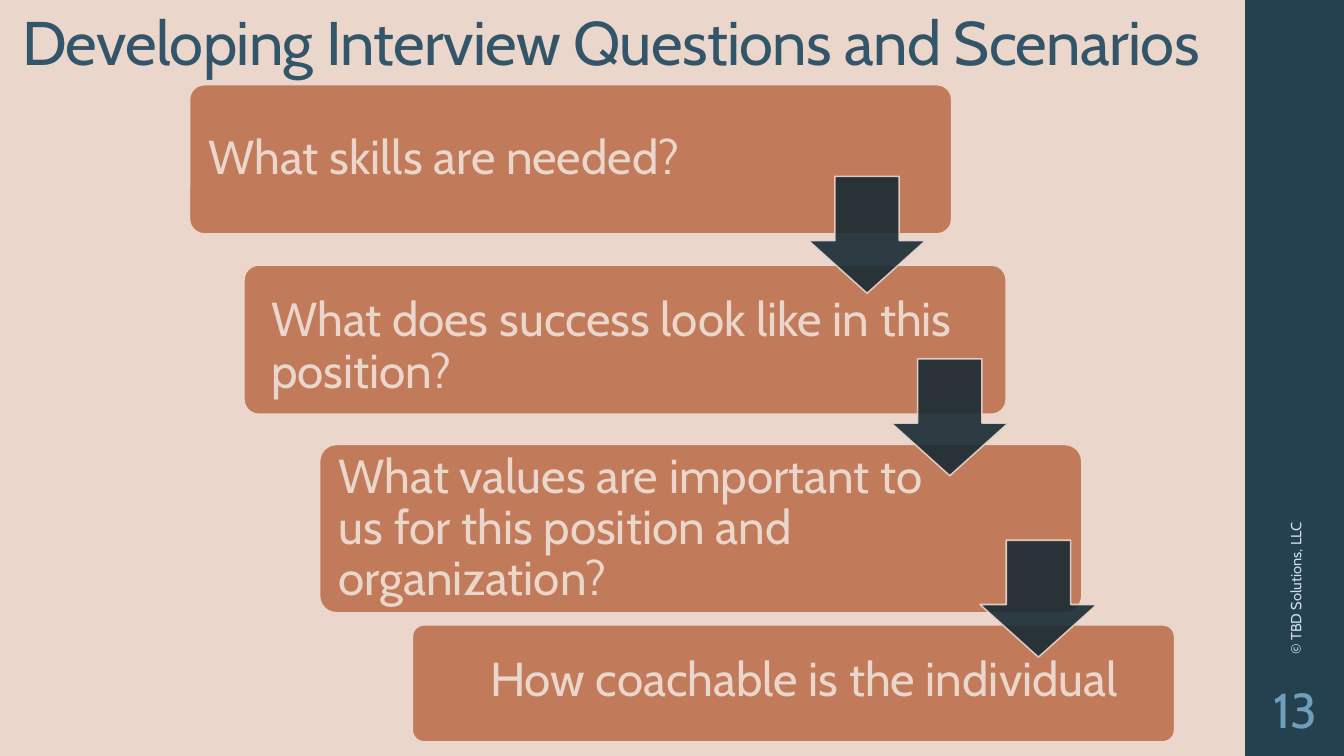
from dataclasses import dataclass

from lxml import etree
from pptx import Presentation
from pptx.dml.color import RGBColor
from pptx.enum.shapes import MSO_SHAPE
from pptx.enum.text import MSO_ANCHOR, PP_ALIGN
from pptx.oxml.ns import qn
from pptx.util import Inches, Pt

RECTANGLE = MSO_SHAPE.RECTANGLE
ROUNDED = MSO_SHAPE.ROUNDED_RECTANGLE
DOWN_ARROW = MSO_SHAPE.DOWN_ARROW
MIDDLE, BOTTOM = MSO_ANCHOR.MIDDLE, MSO_ANCHOR.BOTTOM
LEFT, CENTER = PP_ALIGN.LEFT, PP_ALIGN.CENTER


@dataclass(frozen=True)
class Theme:
    """Colours, font and type sizes of the slide."""
    font: str = "Cabin"
    background: str = "EBD6CC"
    sidebar: str = "25404F"
    title: str = "325569"
    number: str = "6F9FBA"
    copyright: str = "CFDFE8"
    step: str = "C17A5A"
    arrow: str = "192B34"
    arrow_line: str = "E9D7D2"
    title_size: float = 44
    number_size: float = 35
    copyright_size: float = 10.5
    step_size: float = 34
    line_width: float = 1.1


THEME = Theme()
STEP_WIDTH = 7.56
ARROW_SIZE = 1.16
STEPS = [
    ("What skills are needed?", (1.88, 0.84, 1.48), (1.93, 0.88, 5.64, 1.4)),
    ("What does success look like in this position?",
     (2.42, 2.63, 1.48), (2.55, 2.61, 7.3, 1.67)),
    ("What values are important to us for this position and organization?",
     (3.17, 4.41, 1.67), (3.22, 4.46, 6.21, 1.58)),
    ("How coachable is the individual",
     (4.09, 6.2, 1.16), (4.72, 6.2, 7.22, 1.11)),
]
ARROWS = [(8.02, 1.75), (8.84, 3.56), (9.72, 5.36)]


def add_text(slide, text, box, *, size, color, anchor=MIDDLE, align=LEFT,
             insets=(0.1, 0.05), line_spacing=None, tracking=None, rotation=0):
    """Add one formatted paragraph in a wrapping text box."""
    label = slide.shapes.add_textbox(*map(Inches, box))
    label.rotation = rotation
    frame = label.text_frame
    frame.word_wrap = True
    frame.vertical_anchor = anchor
    frame.margin_left = frame.margin_right = Inches(insets[0])
    frame.margin_top = frame.margin_bottom = Inches(insets[1])
    paragraph = frame.paragraphs[0]
    paragraph.alignment = align
    paragraph.line_spacing = line_spacing
    run = paragraph.add_run()
    run.text = text
    run.font.name = THEME.font
    run.font.size = Pt(size)
    run.font.color.rgb = RGBColor.from_string(color)
    if tracking is not None:
        run.font._element.set("spc", str(round(tracking * 100)))


def set_opacity(color_format, percent):
    """Set the opacity of a solid fill."""
    color = color_format._xPr.find(qn("a:solidFill"))[0]
    etree.SubElement(color, qn("a:alpha")).set("val", str(percent * 1000))


def add_block(slide, kind, box, fill, *, line=None, adjustments=(), opacity=None):
    """Add a filled preset shape with an optional outline."""
    block = slide.shapes.add_shape(kind, *map(Inches, box))
    block.shadow.inherit = False
    for index, value in enumerate(adjustments):
        block.adjustments[index] = value
    block.fill.solid()
    block.fill.fore_color.rgb = RGBColor.from_string(fill)
    if line:
        block.line.color.rgb = RGBColor.from_string(line)
        block.line.width = Pt(THEME.line_width)
    else:
        block.line.fill.background()
    if opacity is not None:
        set_opacity(block.fill, opacity)
        set_opacity(block.line.fill, opacity)


def set_opacity(fill, percent):
    """Make a solid fill partly transparent."""
    color = fill._xPr.find(qn("a:solidFill"))[0]
    etree.SubElement(color, qn("a:alpha")).set("val", str(percent * 1000))


def add_step(slide, text, place, text_box):
    """Add one step of the staircase with its question."""
    left, top, height = place
    add_block(slide, ROUNDED, (left, top, STEP_WIDTH, height), THEME.step,
              line=THEME.background, adjustments=(0.1,))
    add_text(slide, text, text_box, size=THEME.step_size, color=THEME.background,
             insets=(0.14, 0.14), line_spacing=0.9)


def add_sidebar(slide):
    """Add the dark band with page number and copyright line."""
    add_block(slide, RECTANGLE, (12.35, 0, 1, 7.5), THEME.sidebar)
    add_text(slide, "13", (12.2, 6.56, 1.3, 0.94), size=THEME.number_size,
             color=THEME.number, align=CENTER, insets=(0.05, 0.05))
    add_text(slide, "© TBD Solutions, LLC", (10.89, 4.43, 3.92, 0.4),
             size=THEME.copyright_size, color=THEME.copyright, rotation=270)


def main():
    """Build and save the slide."""
    deck = Presentation()
    deck.slide_width, deck.slide_height = Inches(13.33), Inches(7.5)
    slide = deck.slides.add_slide(deck.slide_layouts[6])
    slide.background.fill.solid()
    slide.background.fill.fore_color.rgb = RGBColor.from_string(THEME.background)
    add_sidebar(slide)
    add_text(slide, "Developing Interview Questions and Scenarios",
             (0.12, -0.65, 12.09, 1.48), size=THEME.title_size, color=THEME.title,
             anchor=BOTTOM, line_spacing=0.9, tracking=-0.5)
    for question, place, text_box in STEPS:
        add_step(slide, question, place, text_box)
    for left, top in ARROWS:
        add_block(slide, DOWN_ARROW, (left, top, ARROW_SIZE, ARROW_SIZE), THEME.arrow,
                  line=THEME.arrow_line, adjustments=(0.55, 0.45), opacity=90)
    deck.save("out.pptx")


if __name__ == "__main__":
    main()
